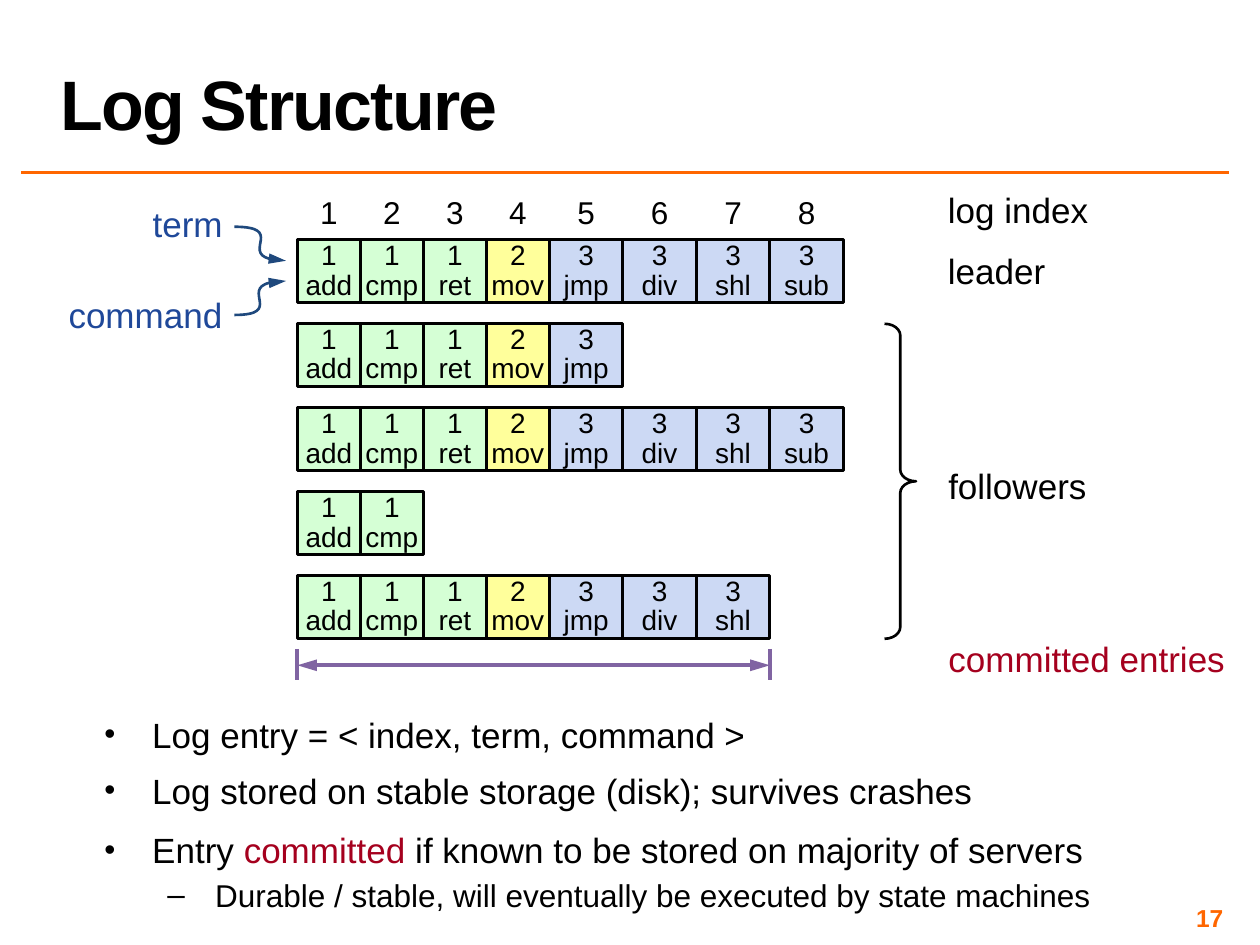
from lxml import etree
from pptx import Presentation
from pptx.dml.color import RGBColor
from pptx.enum import shapes, text
from pptx.oxml import ns
from pptx.util import Inches, Pt

BLACK = RGBColor(0x00, 0x00, 0x00)
ORANGE = RGBColor(0xFF, 0x66, 0x00)
RED = RGBColor(0xA5, 0x00, 0x1E)
BLUE = RGBColor(0x1F, 0x48, 0x99)
NAVY = RGBColor(0x1F, 0x49, 0x7D)
PURPLE = RGBColor(0x80, 0x64, 0xA2)
TERM_FILLS = {
    1: RGBColor(0xD5, 0xFF, 0xD5),
    2: RGBColor(0xFF, 0xFF, 0x9B),
    3: RGBColor(0xCC, 0xD9, 0xF4),
}

FONT = "Arial"
LEFT, CENTER, RIGHT = text.PP_ALIGN.LEFT, text.PP_ALIGN.CENTER, text.PP_ALIGN.RIGHT
TOP, MIDDLE, BOTTOM = text.MSO_ANCHOR.TOP, text.MSO_ANCHOR.MIDDLE, text.MSO_ANCHOR.BOTTOM

# Log grid: four narrow columns, then four wide ones
ENTRIES = [(1, "add"), (1, "cmp"), (1, "ret"), (2, "mov"),
           (3, "jmp"), (3, "div"), (3, "shl"), (3, "sub")]
LOG_LENGTHS = [8, 5, 8, 2, 7]
COLUMN_WIDTHS = [0.5] * 4 + [7 / 12] * 4
GRID_LEFT, GRID_TOP = 2.36, 1.9
ROW_HEIGHT, ROW_PITCH = 0.5, 2 / 3
COLUMN_LEFTS = [GRID_LEFT + sum(COLUMN_WIDTHS[:i]) for i in range(len(ENTRIES))]

# Labels: text, left, top, width, colour
LABELS = [
    ("leader", 7.52, 1.98, 0.78, BLACK),
    ("log index", 7.52, 1.5, 1.12, BLACK),
    ("followers", 7.52, 3.69, 1.11, BLACK),
    ("committed entries", 7.52, 5.06, 2.21, RED),
    ("term", 1.21, 1.61, 0.56, BLUE),
    ("command", 0.54, 2.33, 1.23, BLUE),
]

# Bullets: spans, level, space before, space after
BULLETS = [
    ([("Log entry = < index, term, command >", BLACK)], 0, 4, 4),
    ([("Log stored on stable storage (disk); survives crashes", BLACK)], 0, 4, 4),
    ([("Entry ", BLACK), ("committed", RED),
      (" if known to be stored on majority of servers", BLACK)], 0, 6, 0),
    ([("Durable / stable, will eventually be executed by state machines", BLACK)], 1, 3, 0),
]


def apply(target, values):
    for name, value in values.items():
        setattr(target, name, value)


def add_span(para, words, size, color=BLACK, bold=False):
    span = para.add_run()
    span.text = words
    apply(span.font, {"name": FONT, "size": Pt(size), "bold": bold})
    span.font.color.rgb = color
    return span


def set_frame(box, inset=(0.1, 0.05), anchor=TOP, wrap=True):
    across, down = map(Inches, inset)
    apply(box.text_frame, {
        "margin_left": across, "margin_right": across,
        "margin_top": down, "margin_bottom": down,
        "vertical_anchor": anchor, "word_wrap": wrap,
    })


def add_text(page, words, at, size, align=CENTER, color=BLACK, bold=False, **frame):
    box = page.shapes.add_textbox(*map(Inches, at))
    set_frame(box, **frame)
    para = box.text_frame.paragraphs[0]
    para.alignment = align
    return para, add_span(para, words, size, color, bold)


def style_line(item, color, width, ends=()):
    item.line.color.rgb = color
    item.line.width = Pt(width)
    for end in ends:
        etree.SubElement(item.line._get_or_add_ln(), ns.qn(f"a:{end}"),
                         type="triangle", w="med", len="lg")


def add_line(page, start, end, color, width, ends=()):
    line = page.shapes.add_connector(shapes.MSO_CONNECTOR.STRAIGHT,
                                     *map(Inches, (*start, *end)))
    style_line(line, color, width, ends)
    etree.SubElement(line._element.spPr, ns.qn("a:effectLst"))


def add_curve(page, start, *points):
    """Draw one cubic curve with an arrowhead: two control points, then the end."""
    builder = page.shapes.build_freeform(*map(Inches, start))
    builder.add_line_segments([tuple(map(Inches, p)) for p in points], close=False)
    curve = builder.convert_to_shape()
    outline = curve._element.find(".//" + ns.qn("a:path"))
    cubic = etree.Element(ns.qn("a:cubicBezTo"))
    for segment in outline.findall(ns.qn("a:lnTo")):
        cubic.append(segment[0])
        outline.remove(segment)
    outline.append(cubic)
    curve.fill.background()
    curve.shadow.inherit = False
    style_line(curve, NAVY, 1.5, ["tailEnd"])


def add_entry(page, left, top, width, term, command):
    box = page.shapes.add_shape(shapes.MSO_SHAPE.RECTANGLE,
                                *map(Inches, (left, top, width, ROW_HEIGHT)))
    box.shadow.inherit = False
    box.fill.solid()
    box.fill.fore_color.rgb = TERM_FILLS[term]
    style_line(box, BLACK, 1.5)
    set_frame(box, (0, 0), MIDDLE)
    para = box.text_frame.paragraphs[0]
    apply(para, {"alignment": CENTER, "line_spacing": Pt(17)})
    add_span(para, str(term), 16)
    para.add_line_break()
    add_span(para, command, 16)


def add_logs(page):
    for index, (left, width) in enumerate(zip(COLUMN_LEFTS, COLUMN_WIDTHS), 1):
        add_text(page, str(index), (left, 1.48, width, 0.4), 18)
    for row, length in enumerate(LOG_LENGTHS):
        top = GRID_TOP + row * ROW_PITCH
        for left, width, entry in list(zip(COLUMN_LEFTS, COLUMN_WIDTHS, ENTRIES))[:length]:
            add_entry(page, left, top, width, *entry)


def add_brace(page):
    brace = page.shapes.add_shape(shapes.MSO_SHAPE.RIGHT_BRACE,
                                  *map(Inches, (7.02, 2.57, 0.25, 2.5)))
    brace.adjustments[0] = 0.37
    brace.adjustments[1] = 0.5
    brace.fill.background()
    brace.shadow.inherit = False
    style_line(brace, BLACK, 1.5)


def add_committed_range(page):
    left, right = COLUMN_LEFTS[0], COLUMN_LEFTS[7]
    for x in (left, right):
        add_line(page, (x, 5.15), (x, 5.4), PURPLE, 2.25)
    add_line(page, (left, 5.28), (right, 5.28), PURPLE, 2.25, ["headEnd", "tailEnd"])


def add_bullets(page):
    box = page.shapes.add_textbox(*map(Inches, (0.73, 5.61, 9, 1.73)))
    set_frame(box)
    for number, (spans, level, before, after) in enumerate(BULLETS):
        para = box.text_frame.add_paragraph() if number else box.text_frame.paragraphs[0]
        apply(para, {"level": level, "alignment": LEFT,
                     "space_before": Pt(before), "space_after": Pt(after)})
        props = para._p.get_or_add_pPr()
        props.set("marL", str(Inches(0.38 + level * 0.5)))
        props.set("indent", str(Inches(-0.38)))
        if level == 0:
            etree.SubElement(props, ns.qn("a:buSzPct"), val="90000")
        etree.SubElement(props, ns.qn("a:buFont"), typeface=FONT)
        etree.SubElement(props, ns.qn("a:buChar"), char="•–"[level])
        for words, color in spans:
            add_span(para, words, 20 - 2 * level, color)


def main():
    deck = Presentation()
    deck.slide_width, deck.slide_height = Inches(10), Inches(7.5)
    page = deck.slides.add_slide(deck.slide_layouts[6])

    # Heading, rule and page number
    add_line(page, (0.17, 1.37), (9.75, 1.37), ORANGE, 2)
    add_text(page, "17", (7.42, 7.17, 2.33, 0.23), 14, RIGHT, ORANGE, True,
             inset=(0.04, 0.04), anchor=MIDDLE)
    para, span = add_text(page, "Log Structure", (0.38, 0.02, 9.37, 1.17), 40,
                          LEFT, bold=True, anchor=BOTTOM)
    para.line_spacing = 0.8
    span.font._element.set("spc", "-100")

    # Logs of the leader and the followers
    add_logs(page)
    add_brace(page)
    add_committed_range(page)

    # Labels and their pointers
    for words, left, top, width, color in LABELS:
        add_text(page, words, (left, top, width, 0.34), 20, color=color,
                 inset=(0, 0), wrap=False)
    add_curve(page, (1.86, 1.8), (2.26, 1.8), (1.83, 2.06), (2.27, 2.07))
    add_curve(page, (1.86, 2.5), (2.25, 2.5), (1.82, 2.24), (2.27, 2.23))

    # Explanation
    add_bullets(page)
    deck.save("out.pptx")


if __name__ == "__main__":
    main()
